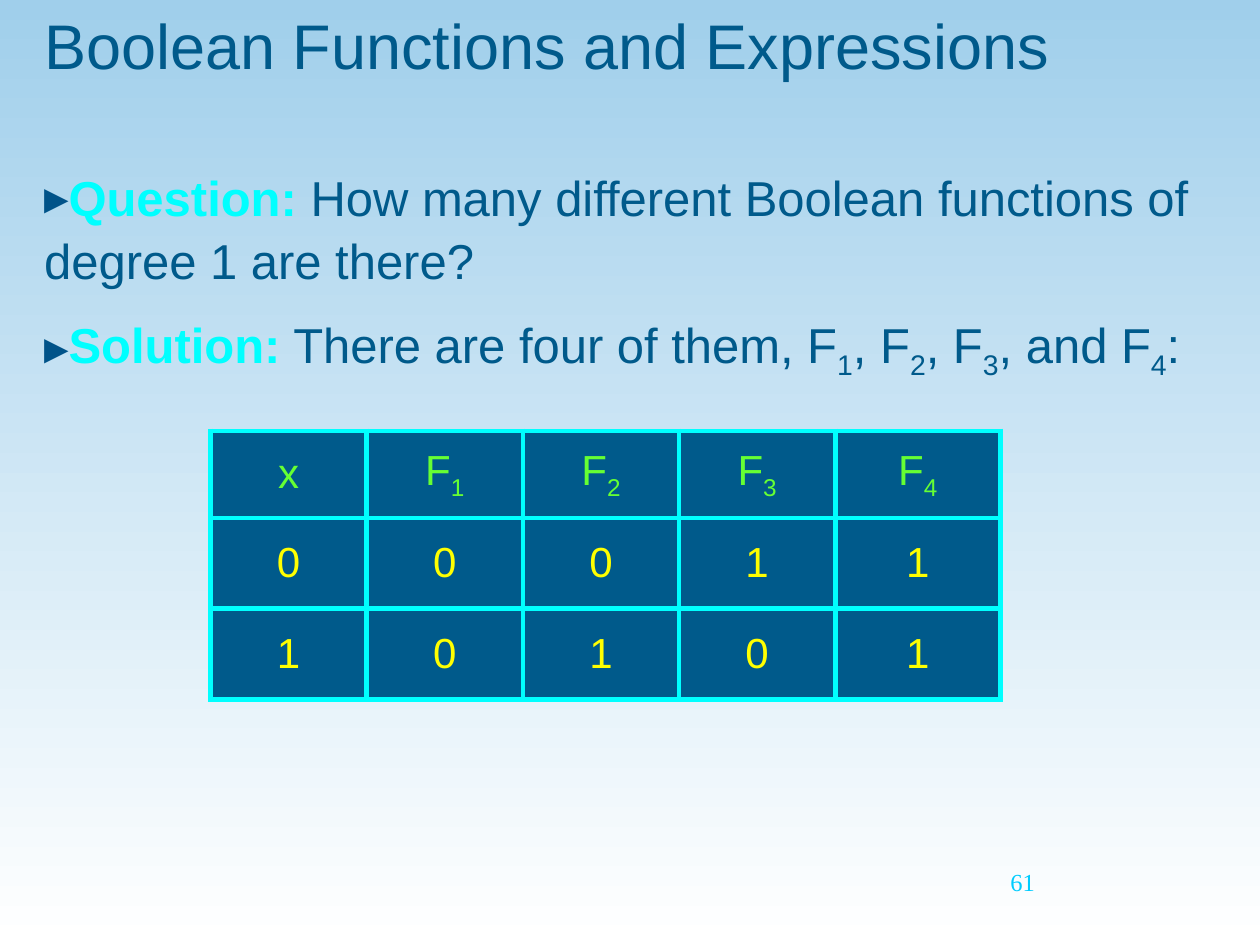
from dataclasses import dataclass

from lxml.etree import SubElement
from pptx import Presentation
from pptx.dml.color import RGBColor
from pptx.enum.text import MSO_ANCHOR, MSO_AUTO_SIZE, PP_ALIGN
from pptx.oxml.ns import qn
from pptx.util import Inches, Pt

NAVY, CYAN, GREEN, YELLOW = "005A8B", "00FFFF", "66FF33", "FFFF00"


@dataclass
class Piece:
    text: str
    color: str = NAVY
    bold: bool = False
    sub: bool = False


def rgb(color: str) -> RGBColor:
    return RGBColor.from_string(color)


def with_subs(text: str, color: str = NAVY) -> list[Piece]:
    """Split text into pieces, lowering the one character after each underscore."""
    first, *rest = text.split("_")
    pieces = [Piece(first, color)]
    for part in rest:
        pieces.append(Piece(part[0], color, sub=True))
        if part[1:]:
            pieces.append(Piece(part[1:], color))
    return pieces


def write(p, pieces: list[Piece], size: float, font: str = "Arial") -> None:
    for piece in pieces:
        r = p.add_run()
        r.text = piece.text
        r.font.size, r.font.name, r.font.bold = Pt(size), font, piece.bold
        r.font.color.rgb = rgb(piece.color)
        if piece.sub:
            r._r.get_or_add_rPr().set("baseline", "-25000")


def place(sp, left: float, top: float, width: float, height: float):
    """Position a text shape and return its top-anchored, wrapping text frame."""
    sp.left, sp.top = Inches(left), Inches(top)
    sp.width, sp.height = Inches(width), Inches(height)
    tf = sp.text_frame
    tf.word_wrap, tf.auto_size = True, MSO_AUTO_SIZE.NONE
    tf.vertical_anchor = MSO_ANCHOR.TOP
    return tf


def add_bullet(p, char: str, color: str) -> None:
    pPr = p._p.get_or_add_pPr()
    pPr.set("marL", "0")
    pPr.set("indent", "0")
    SubElement(SubElement(pPr, qn("a:buClr")), qn("a:srgbClr"), val=color)
    SubElement(pPr, qn("a:buFont"), typeface="Arial")
    SubElement(pPr, qn("a:buChar"), char=char)


def add_borders(cell, color: str, width: float) -> None:
    tcPr = cell._tc.get_or_add_tcPr()
    for i, side in enumerate(("lnL", "lnR", "lnT", "lnB")):
        ln = tcPr.makeelement(qn(f"a:{side}"), {"w": str(Pt(width))})
        SubElement(SubElement(ln, qn("a:solidFill")), qn("a:srgbClr"), val=color)
        tcPr.insert(i, ln)


def fill_cell(cell, text: str, color: str) -> None:
    cell.fill.solid()
    cell.fill.fore_color.rgb = rgb(NAVY)
    add_borders(cell, CYAN, 3)
    cell.vertical_anchor = MSO_ANCHOR.MIDDLE
    p = cell.text_frame.paragraphs[0]
    p.alignment = PP_ALIGN.CENTER
    write(p, with_subs(text, color), 24)


def add_truth_table(slide, rows: list[list[str]]) -> None:
    widths, heights = [1.24] * 4 + [1.31], [0.69, 0.72, 0.72]
    table = slide.shapes.add_table(
        len(rows), len(widths), Inches(1.67), Inches(3.42),
        Inches(sum(widths)), Inches(sum(heights))).table
    for column, width in zip(table.columns, widths):
        column.width = Inches(width)
    for i, (values, height) in enumerate(zip(rows, heights)):
        table.rows[i].height = Inches(height)
        for j, value in enumerate(values):
            fill_cell(table.cell(i, j), value, YELLOW if i else GREEN)


def main() -> None:
    prs = Presentation()
    prs.slide_width, prs.slide_height = Inches(10), Inches(7.5)
    slide = prs.slides.add_slide(prs.slide_layouts[1])

    fill = slide.background.fill
    fill.gradient()
    fill.gradient_angle = 270
    for stop, color, position in zip(fill.gradient_stops, ("A0CFEB", "FFFFFF"), (0, 1)):
        stop.color.rgb, stop.position = rgb(color), position

    title = place(slide.shapes.title, 0.25, 0, 9.42, 1.08).paragraphs[0]
    title.alignment = PP_ALIGN.LEFT
    write(title, [Piece("Boolean Functions and Expressions")], 36)

    items = [
        ("Question:", " How many different Boolean functions of degree 1 are there?"),
        ("Solution:", " There are four of them, F_1, F_2, F_3, and F_4:"),
    ]
    body = place(slide.placeholders[1], 0.25, 1.25, 9.58, 1.92)
    for i, (label, text) in enumerate(items):
        p = body.add_paragraph() if i else body.paragraphs[0]
        p.line_spacing = 1.07
        p.space_before, p.space_after = Pt(5.6 if i else 0), Pt(5.6)
        add_bullet(p, "▸", "005389")
        write(p, [Piece(label, CYAN, bold=True)] + with_subs(text), 28)

    number = place(slide.shapes.add_textbox(0, 0, 0, 0), 7.92, 6.83, 2.08, 0.5)
    write(number.paragraphs[0], [Piece("61", "00CCFF")], 14, "Times New Roman")

    add_truth_table(slide, [
        ["x", "F_1", "F_2", "F_3", "F_4"],
        ["0", "0", "0", "1", "1"],
        ["1", "0", "1", "0", "1"],
    ])
    prs.save("out.pptx")


if __name__ == "__main__":
    main()
